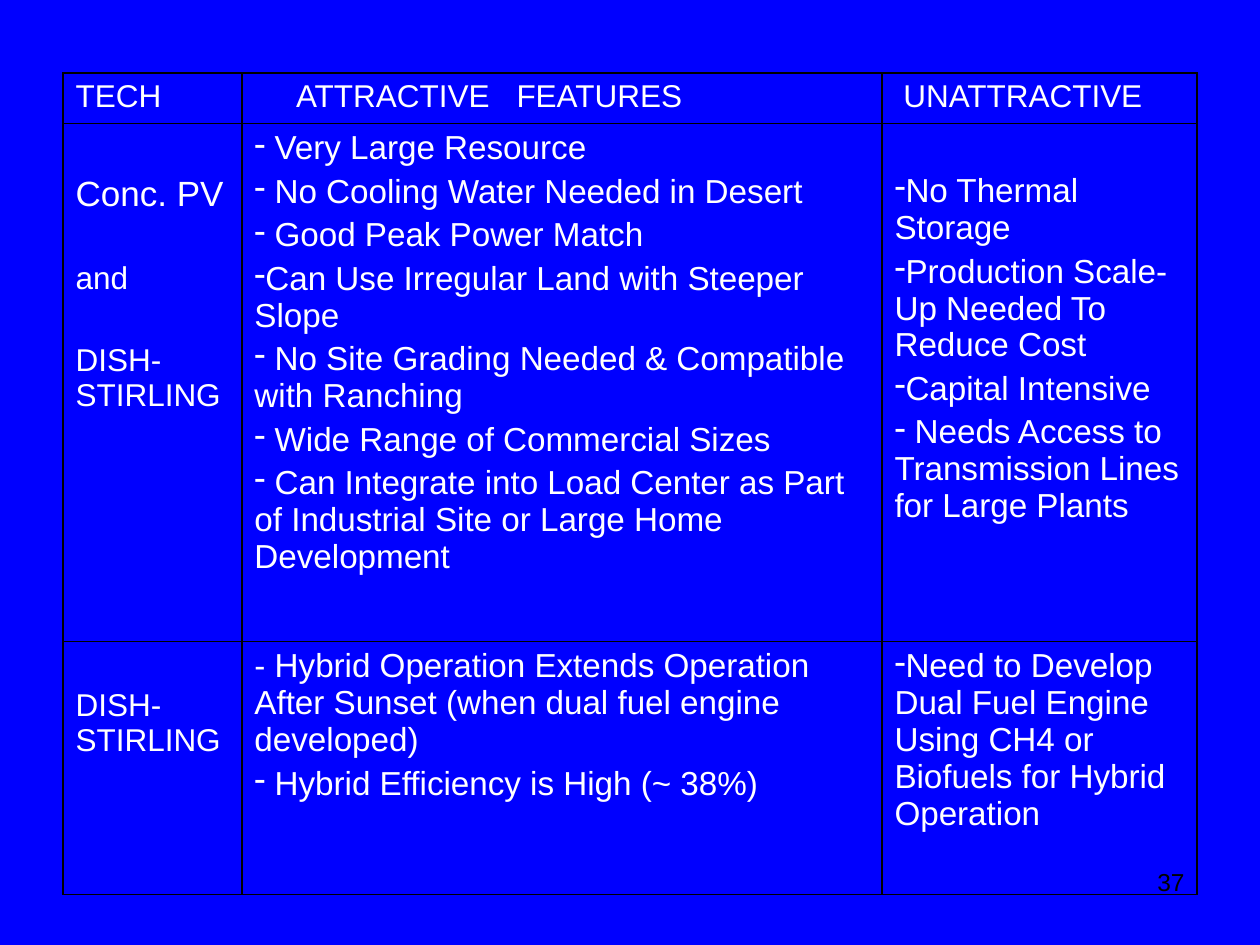
from dataclasses import dataclass

from lxml import etree
from pptx import Presentation
from pptx.dml.color import RGBColor
from pptx.enum.text import PP_ALIGN
from pptx.oxml.ns import qn
from pptx.util import Inches, Pt

RIGHT = PP_ALIGN.RIGHT
BLANK_LAYOUT = 6


@dataclass(frozen=True)
class Theme:
    font: str = "Arial"
    background: RGBColor = RGBColor(0x00, 0x00, 0xFF)
    text: RGBColor = RGBColor(0xFF, 0xFF, 0xFF)
    dark: RGBColor = RGBColor(0x00, 0x00, 0x00)
    label: int = 18
    lead: int = 20
    body: int = 19
    number: int = 14
    gap: float = 3.7
    border: float = 1


@dataclass(frozen=True)
class Line:
    text: str
    size: int
    before: float = Theme.gap
    bullet: bool = False
    tab: float = 0


@dataclass(frozen=True)
class Entry:
    lines: list
    left: float = 0.1
    top: float = 0.05


THEME = Theme()


def bullets(*texts):
    return [Line(text, THEME.body, bullet=True) for text in texts]


HEADER = [
    Entry([Line("TECH", THEME.label)]),
    Entry([Line("ATTRACTIVE\tFEATURES", THEME.label, tab=1.75)], left=0.43),
    Entry([Line("UNATTRACTIVE", THEME.label)], left=0.17),
]
SHARED = [
    Entry([
        Line("Conc. PV", THEME.lead),
        Line("and", THEME.label, before=26.5),
        Line("DISH-STIRLING", THEME.label, before=27),
    ], top=0.41),
    Entry(bullets(
        " Very Large Resource",
        " No Cooling Water Needed in Desert",
        " Good Peak Power Match",
        "Can Use Irregular Land with Steeper Slope",
        " No Site Grading Needed & Compatible with Ranching",
        " Wide Range of Commercial Sizes",
        " Can Integrate into Load Center as Part of Industrial Site or Large Home Development",
    )),
    Entry(bullets(
        "No Thermal Storage",
        "Production Scale-Up Needed To Reduce Cost",
        "Capital Intensive",
        " Needs Access to Transmission Lines for Large Plants",
    ), top=0.39),
]
DISH_ONLY = [
    Entry([Line("DISH-STIRLING", THEME.label)], top=0.37),
    Entry([
        Line("- Hybrid Operation Extends Operation After Sunset "
             "(when dual fuel engine developed)", THEME.body),
        *bullets(" Hybrid Efficiency is High (~ 38%)"),
    ]),
    Entry(bullets("Need to Develop Dual Fuel Engine Using CH4 or Biofuels for Hybrid Operation")),
]


def style_font(paragraph, size, color):
    paragraph.font.name = THEME.font
    paragraph.font.size = Pt(size)
    paragraph.font.color.rgb = color


def add_tab_stop(paragraph, position):
    stops = etree.SubElement(paragraph._p.get_or_add_pPr(), qn("a:tabLst"))
    etree.SubElement(stops, qn("a:tab"), pos=str(Inches(position)), algn="l")


def add_dash(paragraph):
    properties = paragraph._p.get_or_add_pPr()
    properties.set("marL", "0")
    properties.set("indent", "0")
    etree.SubElement(properties, qn("a:buChar"), char="-")


def draw_borders(cell):
    properties = cell._tc.get_or_add_tcPr()
    for index, side in enumerate(("lnL", "lnR", "lnT", "lnB")):
        border = etree.Element(qn(f"a:{side}"), w=str(Pt(THEME.border)))
        fill = etree.SubElement(border, qn("a:solidFill"))
        etree.SubElement(fill, qn("a:srgbClr"), val=str(THEME.dark))
        properties.insert(index, border)


def fill_cell(cell, entry):
    cell.margin_left = Inches(entry.left)
    cell.margin_top = Inches(entry.top)
    cell.fill.background()
    draw_borders(cell)
    frame = cell.text_frame
    for index, line in enumerate(entry.lines):
        paragraph = frame.add_paragraph() if index else frame.paragraphs[0]
        paragraph.text = line.text
        paragraph.space_before = Pt(line.before if index else 0)
        if line.bullet:
            add_dash(paragraph)
        if line.tab:
            add_tab_stop(paragraph, line.tab)
        style_font(paragraph, line.size, THEME.text)


def add_comparison(slide, left, top, widths, heights, rows):
    table = slide.shapes.add_table(
        len(heights), len(widths), Inches(left), Inches(top),
        Inches(sum(widths)), Inches(sum(heights))).table
    table.first_row = False
    table.horz_banding = False
    for column, width in zip(table.columns, widths):
        column.width = Inches(width)
    for row, height, entries in zip(table.rows, heights, rows):
        row.height = Inches(height)
        for cell, entry in zip(row.cells, entries):
            fill_cell(cell, entry)


def add_page_number(slide, left, top, width, height, number):
    frame = slide.shapes.add_textbox(
        Inches(left), Inches(top), Inches(width), Inches(height)).text_frame
    frame.word_wrap = True
    paragraph = frame.paragraphs[0]
    paragraph.text = number
    paragraph.alignment = RIGHT
    style_font(paragraph, THEME.number, THEME.dark)


def main():
    deck = Presentation()
    deck.slide_width = Inches(10)
    deck.slide_height = Inches(7.5)
    slide = deck.slides.add_slide(deck.slide_layouts[BLANK_LAYOUT])
    slide.background.fill.solid()
    slide.background.fill.fore_color.rgb = THEME.background
    add_page_number(slide, 7.17, 6.83, 2.33, 0.52, "37")
    add_comparison(slide, 0.5, 0.58, (1.42, 5.08, 2.5), (0.39, 4.11, 2.01),
                   (HEADER, SHARED, DISH_ONLY))
    deck.save("out.pptx")


if __name__ == "__main__":
    main()
